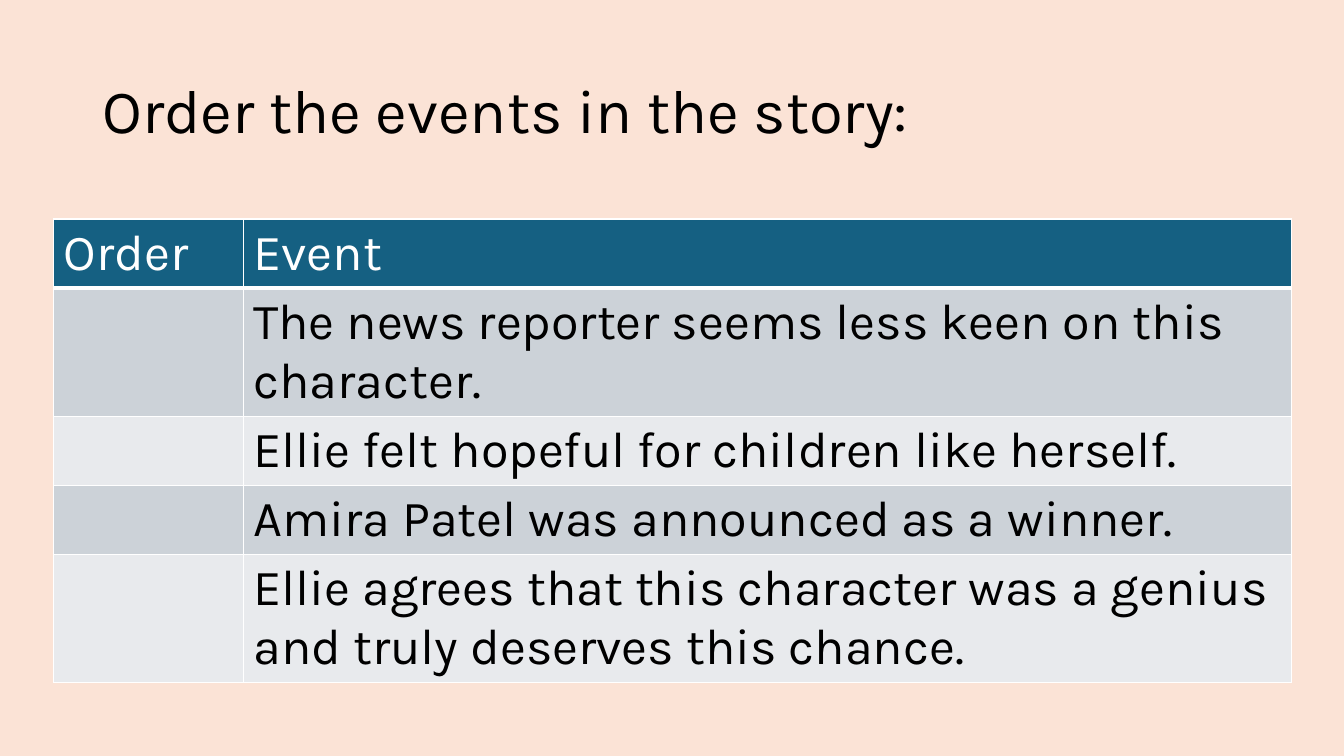
from typing import NamedTuple

from lxml.etree import SubElement as Sub
from pptx import Presentation
from pptx.dml.color import RGBColor as RGB
from pptx.enum.text import MSO_ANCHOR as Anchor, MSO_AUTO_SIZE as Fit, PP_ALIGN as Align
from pptx.oxml.ns import qn
from pptx.util import Cm, Pt

HUES = {"page": "FBE3D6", "head": "156082", "odd": "CCD2D8", "even": "E8EAED",
        "ink": "000000", "white": "FFFFFF"}
COLS = (4.78, 26.42)


class Row(NamedTuple):
    """One table row: its texts, look and height in centimetres."""
    order: str
    event: str
    fill: str
    ink: str = "ink"
    tall: float = 1.74
    rule: int = 1


ROWS = [
    Row("Order", "Event", "head", "white", rule=3),
    Row("", "The news reporter seems less keen on this character.", "odd", tall=3.23),
    Row("", "Ellie felt hopeful for children like herself.", "even"),
    Row("", "Amira Patel was announced as a winner.", "odd"),
    Row("", "Ellie agrees that this character was a genius and truly deserves this chance.",
        "even", tall=3.23),
]


def hue(name: str) -> RGB:
    """Look up a colour."""
    return RGB.from_string(HUES[name])


def style(para, size: int, ink: str) -> None:
    """Set the font of a paragraph."""
    font = para.font
    font.name, font.size, font.bold = "Karla", Pt(size), False
    font.color.rgb = hue(ink)


def edge(cell, side: str, width: int) -> None:
    """Draw one white cell border."""
    props = cell._tc.get_or_add_tcPr()
    line = Sub(props, qn(f"a:ln{side}"), w=str(Pt(width)))
    Sub(Sub(line, qn("a:solidFill")), qn("a:srgbClr"), val=HUES["white"])


def paint(cell, text: str, row: Row) -> None:
    """Fill, border and write one cell."""
    for side in "LRT":
        edge(cell, side, 1)
    edge(cell, "B", row.rule)
    cell.fill.solid()
    cell.fill.fore_color.rgb = hue(row.fill)
    cell.text = text
    style(cell.text_frame.paragraphs[0], 36, row.ink)


def add_title(slide) -> None:
    """Place and format the title."""
    title = slide.shapes.title
    title.left, title.top, title.width, title.height = Cm(2.33), Cm(1.01), Cm(29.21), Cm(3.68)
    frame = title.text_frame
    frame.text = "Order the events in the story:"
    frame.auto_size, frame.vertical_anchor = Fit.NONE, Anchor.MIDDLE
    para = frame.paragraphs[0]
    para.alignment, para.line_spacing = Align.LEFT, 0.9
    style(para, 44, "ink")


def add_events(slide) -> None:
    """Build the table of events."""
    tall = sum(row.tall for row in ROWS)
    table = slide.shapes.add_table(len(ROWS), len(COLS), Cm(1.35), Cm(5.52),
                                   Cm(sum(COLS)), Cm(tall)).table
    for col, wide in zip(table.columns, COLS):
        col.width = Cm(wide)
    for line, row in zip(table.rows, ROWS):
        line.height = Cm(row.tall)
        for cell, text in zip(line.cells, (row.order, row.event)):
            paint(cell, text, row)


def main() -> None:
    """Build and save the slide."""
    deck = Presentation()
    deck.slide_width, deck.slide_height = Cm(33.87), Cm(19.05)
    slide = deck.slides.add_slide(deck.slide_layouts[5])
    back = slide.background.fill
    back.solid()
    back.fore_color.rgb = hue("page")
    add_title(slide)
    add_events(slide)
    deck.save("out.pptx")


if __name__ == "__main__":
    main()
